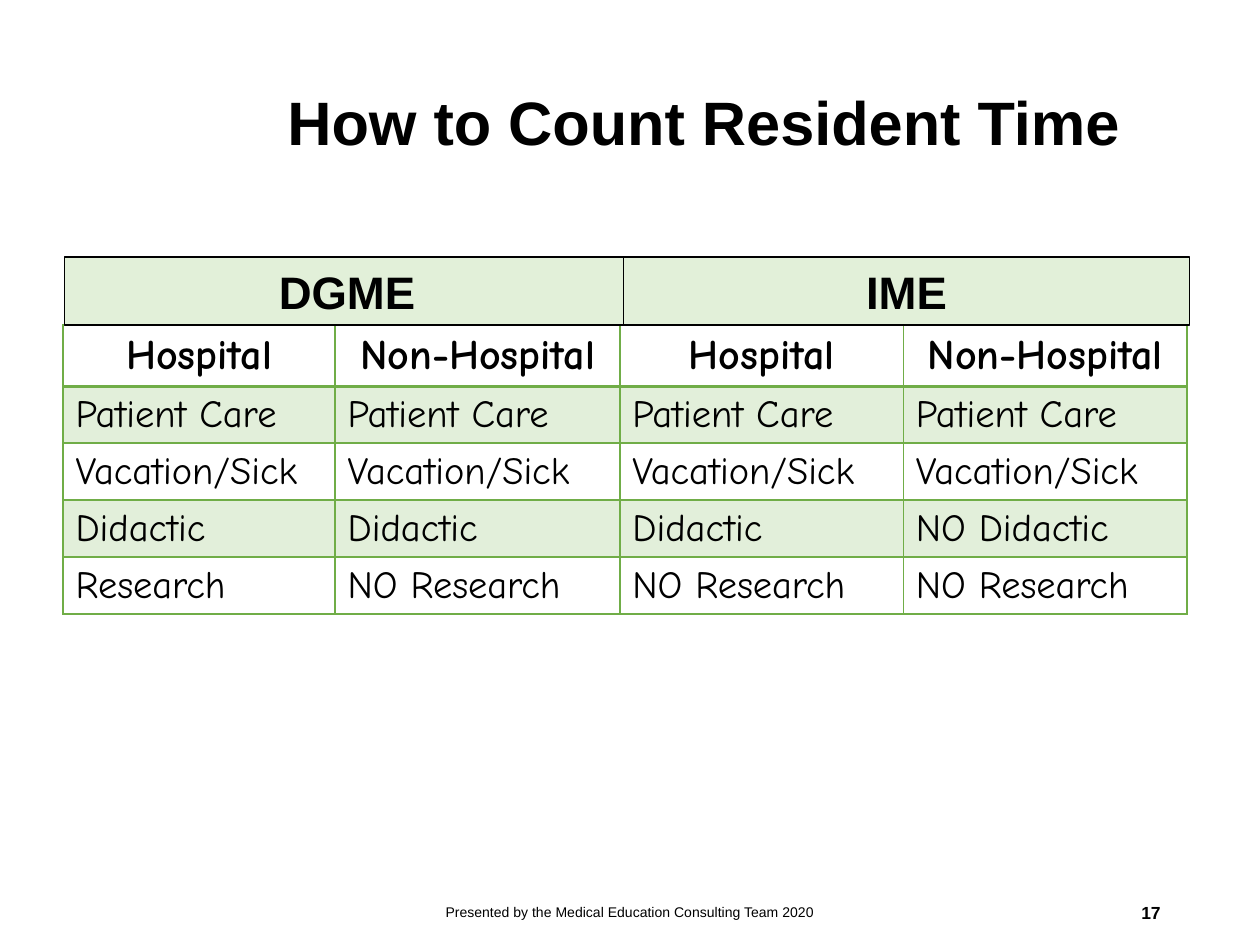
from lxml import etree
from pptx import Presentation
from pptx.dml.color import RGBColor
from pptx.enum.shapes import MSO_SHAPE
from pptx.enum.text import MSO_ANCHOR, PP_ALIGN
from pptx.oxml.ns import qn
from pptx.util import Inches, Pt

LEFT, CENTER, RIGHT = PP_ALIGN.LEFT, PP_ALIGN.CENTER, PP_ALIGN.RIGHT
TOP, MIDDLE = MSO_ANCHOR.TOP, MSO_ANCHOR.MIDDLE
RECTANGLE = MSO_SHAPE.RECTANGLE

BLACK, GREEN, PALE_GREEN, HEADING_GREEN = "000000", "70AD47", "E2EFDA", "E2F0D9"
TITLE_ONLY = 5
COLUMN_WIDTHS = [2.16, 2.26, 2.25, 2.25]
HEADER_HEIGHT, ROW_HEIGHT = 0.48, 0.45
ROWS = [
    ["Hospital", "Non-Hospital"] * 2,
    ["Patient Care"] * 4,
    ["Vacation/Sick"] * 4,
    ["Didactic"] * 3 + ["NO Didactic"],
    ["Research"] + ["NO Research"] * 3,
]


def color(value):
    return RGBColor.from_string(value)


def write(frame, text, size, font="Arial", bold=False, align=LEFT,
          anchor=MIDDLE, line_spacing=None):
    frame.word_wrap = True
    frame.vertical_anchor = anchor
    para = frame.paragraphs[0]
    para.alignment = align
    para.line_spacing = line_spacing
    span = para.add_run()
    span.text = text
    span.font.size = Pt(size)
    span.font.name = font
    span.font.bold = bold
    span.font.color.rgb = color(BLACK)


def add_title(page, box, text):
    title = page.shapes.title
    title.left, title.top, title.width, title.height = map(Inches, box)
    write(title.text_frame, text, 35, bold=True, line_spacing=0.9)


def add_headings(page, box, names):
    left, top, width, height = box
    for index, name in enumerate(names):
        heading = page.shapes.add_shape(
            RECTANGLE, Inches(left + index * (width - 0.05)), Inches(top),
            Inches(width), Inches(height))
        heading.shadow.inherit = False
        heading.fill.solid()
        heading.fill.fore_color.rgb = color(HEADING_GREEN)
        heading.line.color.rgb = color(BLACK)
        heading.line.width = Pt(0.75)
        write(heading.text_frame, name, 26, bold=True, align=CENTER)


def add_borders(cell, widths):
    properties = cell._tc.get_or_add_tcPr()
    for side, width in widths.items():
        line = etree.SubElement(properties, qn(f"a:ln{side}"), w=str(Pt(width)))
        fill = etree.SubElement(line, qn("a:solidFill"))
        etree.SubElement(fill, qn("a:srgbClr"), val=GREEN)


def add_time_table(page, box):
    table = page.shapes.add_table(
        len(ROWS), len(COLUMN_WIDTHS), *map(Inches, box)).table
    for column, width in zip(table.columns, COLUMN_WIDTHS):
        column.width = Inches(width)
    for row_index, texts in enumerate(ROWS):
        is_header = row_index == 0
        table.rows[row_index].height = Inches(HEADER_HEIGHT if is_header else ROW_HEIGHT)
        for column_index, text in enumerate(texts):
            cell = table.cell(row_index, column_index)
            add_borders(cell, {"L": 1, "R": 1, "T": 2 if row_index == 1 else 1,
                               "B": 2 if is_header else 1})
            if row_index % 2:
                cell.fill.solid()
                cell.fill.fore_color.rgb = color(PALE_GREEN)
            else:
                cell.fill.background()
            write(cell.text_frame, text, 24 if is_header else 22, font="Comic Neue",
                  bold=is_header, align=CENTER if is_header else LEFT, anchor=TOP)


def add_footer_text(page, box, text, size, **options):
    footer = page.shapes.add_textbox(*map(Inches, box))
    write(footer.text_frame, text, size, **options)


def main():
    deck = Presentation()
    deck.slide_width, deck.slide_height = Inches(10), Inches(7.5)
    page = deck.slides.add_slide(deck.slide_layouts[TITLE_ONLY])
    table_height = HEADER_HEIGHT + ROW_HEIGHT * (len(ROWS) - 1)
    add_time_table(page, (0.5, 2.58, sum(COLUMN_WIDTHS), table_height))
    add_title(page, (2.18, 0.27, 7.14, 1.45), "How to Count Resident Time")
    add_headings(page, (0.51, 2.04, 4.49, 0.54), ["DGME", "IME"])
    add_footer_text(page, (3.31, 7.04, 3.38, 0.4),
                    "Presented by the Medical Education Consulting Team 2020", 8, align=CENTER)
    add_footer_text(page, (7.06, 7.04, 2.25, 0.4), "17", 10, bold=True, align=RIGHT)
    deck.save("out.pptx")


if __name__ == "__main__":
    main()
